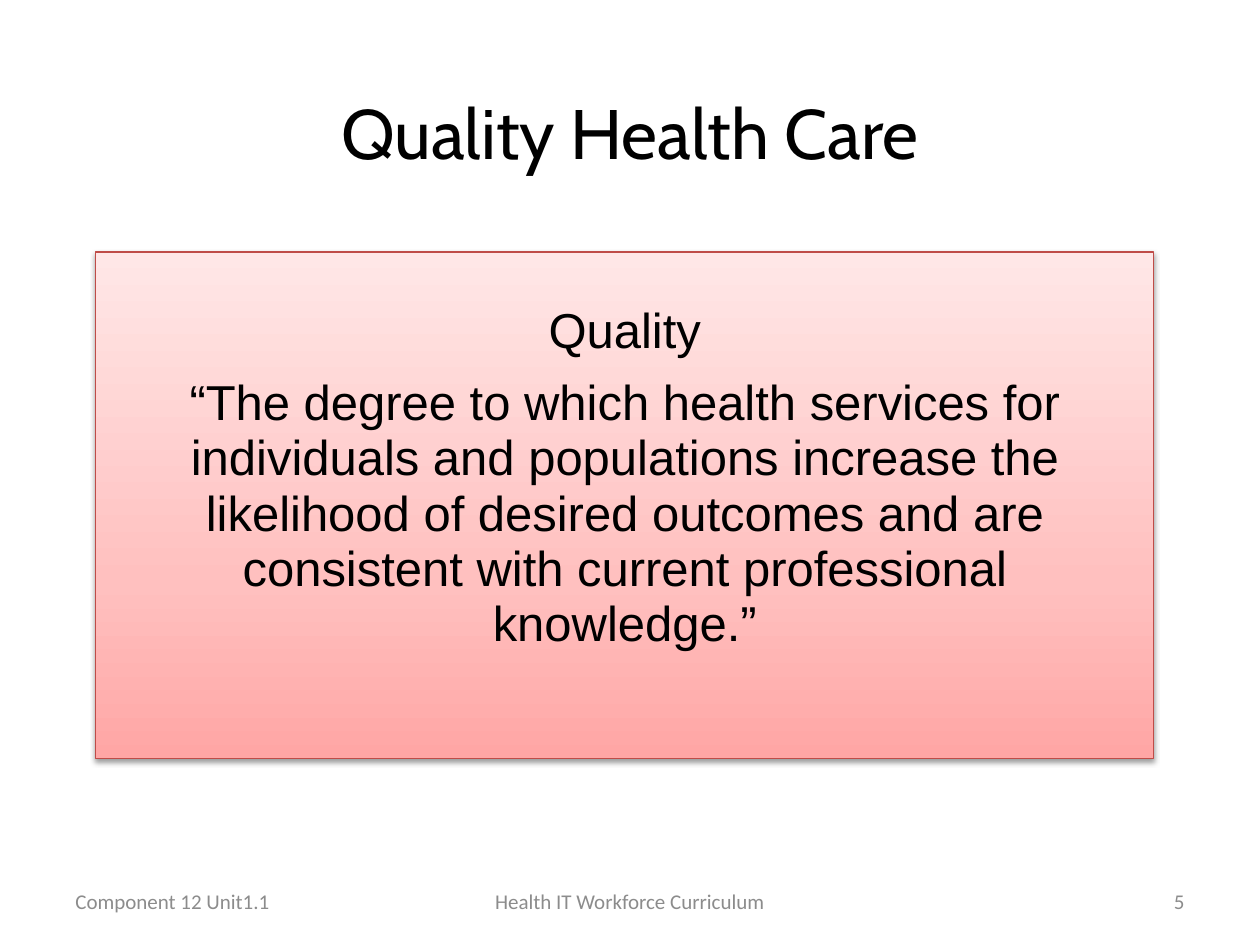
from dataclasses import dataclass

from lxml import etree
from pptx import Presentation
from pptx.dml.color import RGBColor
from pptx.enum.shapes import MSO_SHAPE
from pptx.enum.text import MSO_ANCHOR, PP_ALIGN
from pptx.oxml import parse_xml
from pptx.oxml.ns import nsdecls, qn
from pptx.util import Pt

LEFT, CENTER, RIGHT = PP_ALIGN.LEFT, PP_ALIGN.CENTER, PP_ALIGN.RIGHT
TOP, MIDDLE = MSO_ANCHOR.TOP, MSO_ANCHOR.MIDDLE
RECTANGLE = MSO_SHAPE.RECTANGLE


@dataclass(frozen=True)
class Theme:
    ink: str = "000000"
    muted: str = "8C8C8C"
    panel_line: str = "BF4C48"
    panel_stops: tuple = ((0, "FFA6A5"), (35, "FFC0BF"), (100, "FFE7E7"))
    title_font: str = "Cabin"
    body_font: str = "Arial"
    footer_font: str = "Calibri"
    title_size: int = 40
    body_size: int = 28
    footer_size: int = 12


THEME = Theme()


def style(p, font, size, color, align):
    p.alignment = align
    p.font.name = font
    p.font.size = Pt(size)
    p.font.color.rgb = RGBColor.from_string(color)


def add_label(s, box, text, font, size, color, align):
    tf = s.shapes.add_textbox(*map(Pt, box)).text_frame
    tf.word_wrap = True
    tf.vertical_anchor = MIDDLE
    p = tf.paragraphs[0]
    p.text = text
    style(p, font, size, color, align)


def set_gradient(sp, stops):
    """Fill from the bottom edge up, with any number of stops."""
    sp.fill.gradient()
    sp.fill.gradient_angle = 90
    stop_list = sp.element.spPr.find(qn("a:gradFill")).find(qn("a:gsLst"))
    for stop in list(stop_list):
        stop_list.remove(stop)
    for position, color in stops:
        stop = etree.SubElement(stop_list, qn("a:gs"), pos=str(position * 1000))
        etree.SubElement(stop, qn("a:srgbClr"), val=color)


def set_shadow(sp, color, opacity, blur, distance):
    """Drop shadow straight down."""
    sp.shadow.inherit = False
    effects = sp.element.spPr.find(qn("a:effectLst"))
    effects.append(parse_xml(
        f'<a:outerShdw {nsdecls("a")} blurRad="{Pt(blur)}" dist="{Pt(distance)}" '
        f'dir="5400000" rotWithShape="0"><a:srgbClr val="{color}">'
        f'<a:alpha val="{opacity * 1000}"/></a:srgbClr></a:outerShdw>'))


def add_quote_panel(s, box, paragraphs):
    sp = s.shapes.add_shape(RECTANGLE, *map(Pt, box))
    set_gradient(sp, THEME.panel_stops)
    sp.line.color.rgb = RGBColor.from_string(THEME.panel_line)
    sp.line.width = Pt(0.75)
    set_shadow(sp, THEME.ink, opacity=38, blur=3.1, distance=1.6)

    tf = sp.text_frame
    tf.word_wrap = True
    tf.vertical_anchor = TOP
    tf.margin_left = tf.margin_right = tf.margin_bottom = Pt(8.64)
    tf.margin_top = Pt(30)
    for i, text in enumerate(paragraphs):
        p = tf.add_paragraph() if i else tf.paragraphs[0]
        p.text = text
        style(p, THEME.body_font, THEME.body_size, THEME.ink, CENTER)
        p.line_spacing = 0.94
        p.space_after = Pt(9.5)


def add_footer(s, box, left_text, center_text, right_text):
    x, y, w, h = box
    side, middle = 168, 228
    for dx, width, text, align in (
        (0, side, left_text, LEFT),
        ((w - middle) / 2, middle, center_text, CENTER),
        (w - side, side, right_text, RIGHT),
    ):
        add_label(s, (x + dx, y, width, h), text, THEME.footer_font,
                  THEME.footer_size, THEME.muted, align)


def main():
    prs = Presentation()
    prs.slide_width, prs.slide_height = Pt(720), Pt(540)
    s = prs.slides.add_slide(prs.slide_layouts[6])

    # Title
    add_label(s, (54, 42, 612, 66), "Quality Health Care", THEME.title_font,
              THEME.title_size, THEME.ink, CENTER)

    # Definition
    add_quote_panel(s, (54.6, 144, 604.8, 289.5), (
        "Quality",
        "“The degree to which health services for individuals and populations "
        "increase the likelihood of desired outcomes and are consistent with "
        "current professional knowledge.”",
    ))

    # Footer
    add_footer(s, (36, 500.5, 648, 28.75), "Component 12 Unit1.1",
               "Health IT Workforce Curriculum", "5")

    prs.save("out.pptx")


if __name__ == "__main__":
    main()
